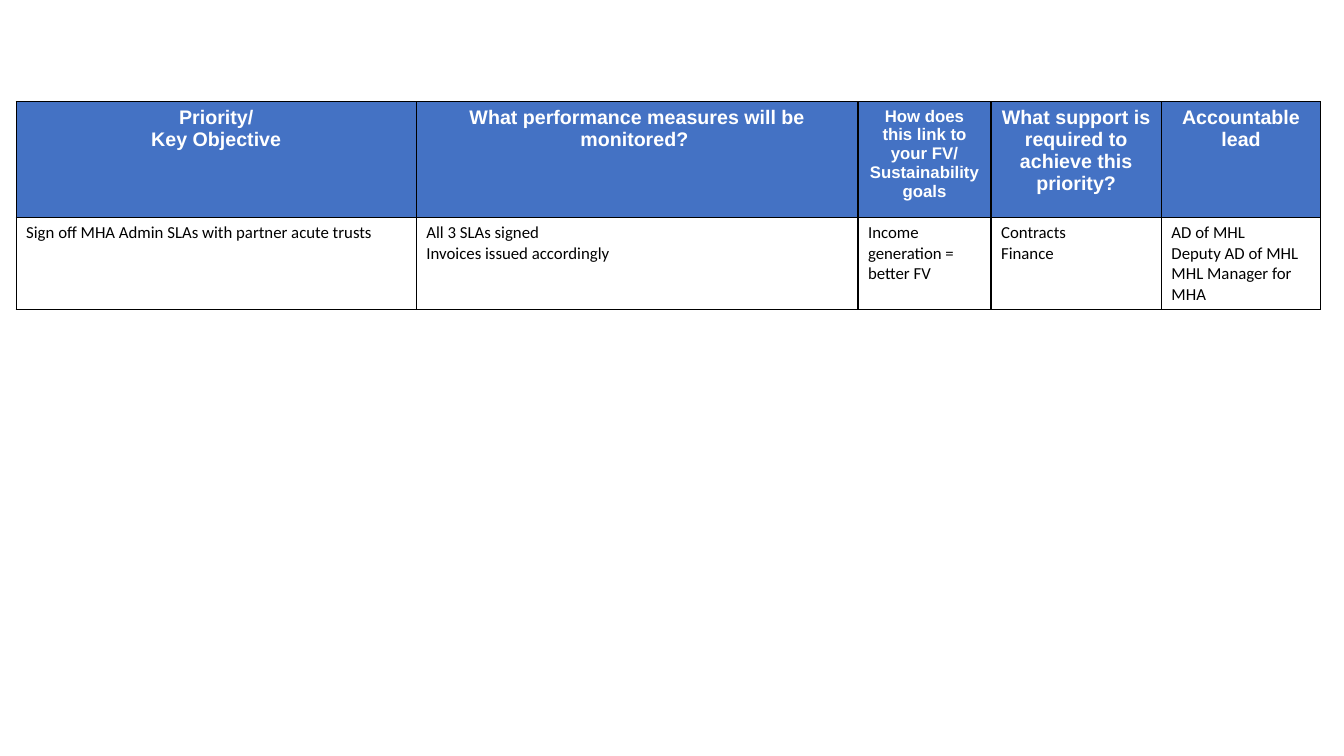
"""Build the slide with the table of priorities, measures and leads."""
import pptx
import pptx.dml.color
import pptx.enum.text
import pptx.oxml
import pptx.oxml.ns
import pptx.util
from pptx.util import Inches

COLORS = {"header": "4472C4", "header_text": "FFFFFF", "text": "000000", "border": "000000"}
COLUMNS = [
    (3.97, 14, "Priority/\nKey Objective", "Sign off MHA Admin SLAs with partner acute trusts"),
    (4.38, 14, "What performance measures will be monitored? ",
     "All 3 SLAs signed\nInvoices issued accordingly"),
    (1.32, 12, "How does this link to your FV/\nSustainability goals",
     "Income generation = better FV"),
    (1.69, 14, "What support is required to achieve this priority?", "Contracts\nFinance"),
    (1.58, 14, "Accountable lead", "AD of MHL\nDeputy AD of MHL\nMHL Manager for MHA"),
]
ROW_HEIGHTS = [1.15, 0.91]


def add_borders(cell):
    tcPr = cell._tc.get_or_add_tcPr()
    for i, side in enumerate(("lnL", "lnR", "lnT", "lnB")):
        tcPr.insert(i, pptx.oxml.parse_xml(
            f'<a:{side} {pptx.oxml.ns.nsdecls("a")} w="12700"><a:solidFill>'
            f'<a:srgbClr val="{COLORS["border"]}"/></a:solidFill></a:{side}>'))


prs = pptx.Presentation()
prs.slide_width, prs.slide_height = Inches(13.33), Inches(7.5)
s = prs.slides.add_slide(prs.slide_layouts[6])

table = s.shapes.add_table(len(ROW_HEIGHTS), len(COLUMNS), Inches(0.16), Inches(1.01),
                           Inches(12.95), Inches(sum(ROW_HEIGHTS))).table
table.horz_banding = False
for row, height in zip(table.rows, ROW_HEIGHTS):
    row.height = Inches(height)

for c, (width, header_size, header, body) in enumerate(COLUMNS):
    table.columns[c].width = Inches(width)
    for r, text in enumerate((header, body)):
        is_header = r == 0
        cell = table.cell(r, c)
        cell.text = text
        if is_header:
            cell.fill.solid()
            cell.fill.fore_color.rgb = pptx.dml.color.RGBColor.from_string(COLORS["header"])
        else:
            cell.fill.background()
        add_borders(cell)
        for p in cell.text_frame.paragraphs:
            p.alignment = (pptx.enum.text.PP_ALIGN.CENTER if is_header
                           else pptx.enum.text.PP_ALIGN.LEFT)
            p.font.name = "Arial" if is_header else "Calibri"
            p.font.size = pptx.util.Pt(header_size if is_header else 12)
            p.font.bold = is_header
            p.font.color.rgb = pptx.dml.color.RGBColor.from_string(
                COLORS["header_text" if is_header else "text"])

prs.save("out.pptx")
